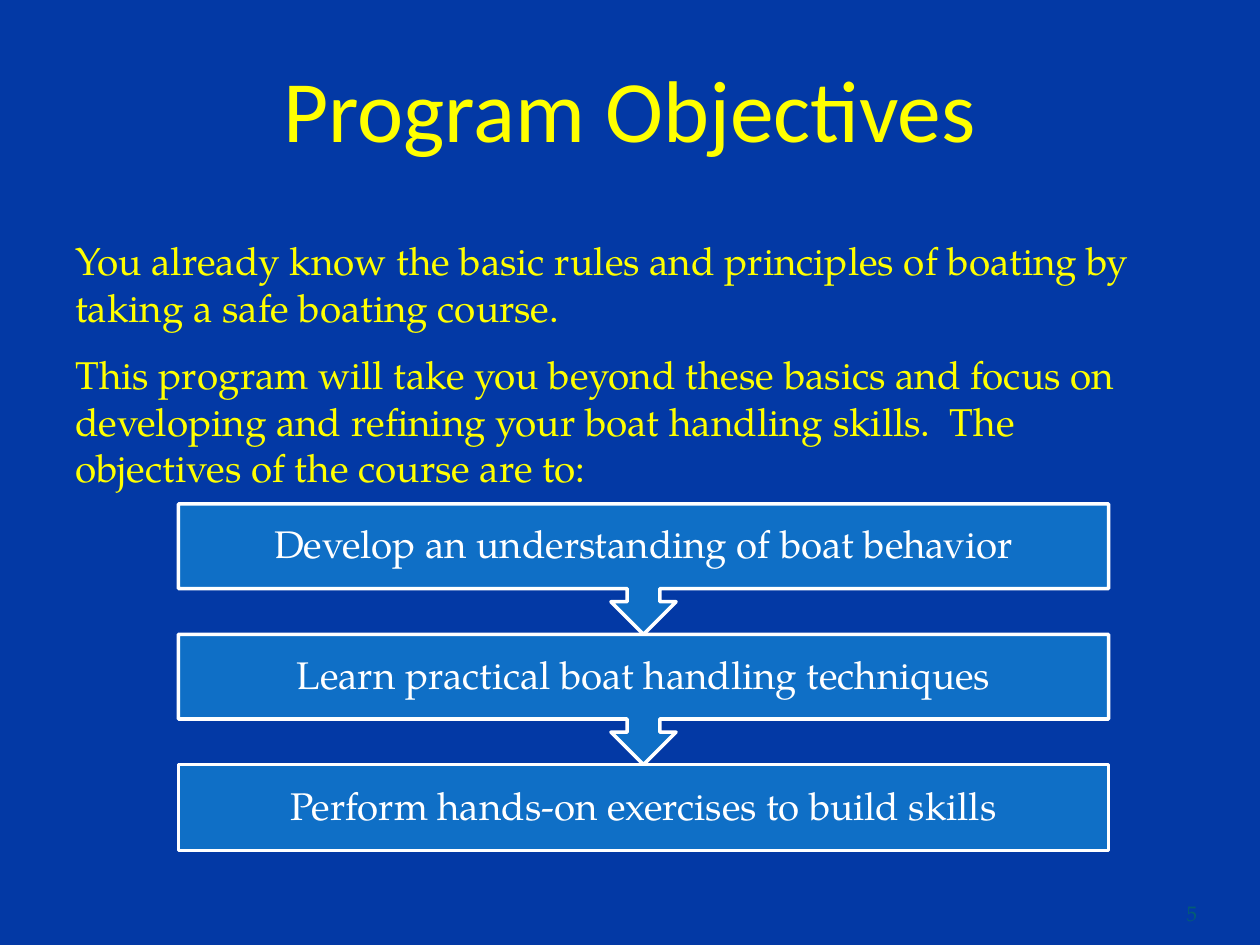
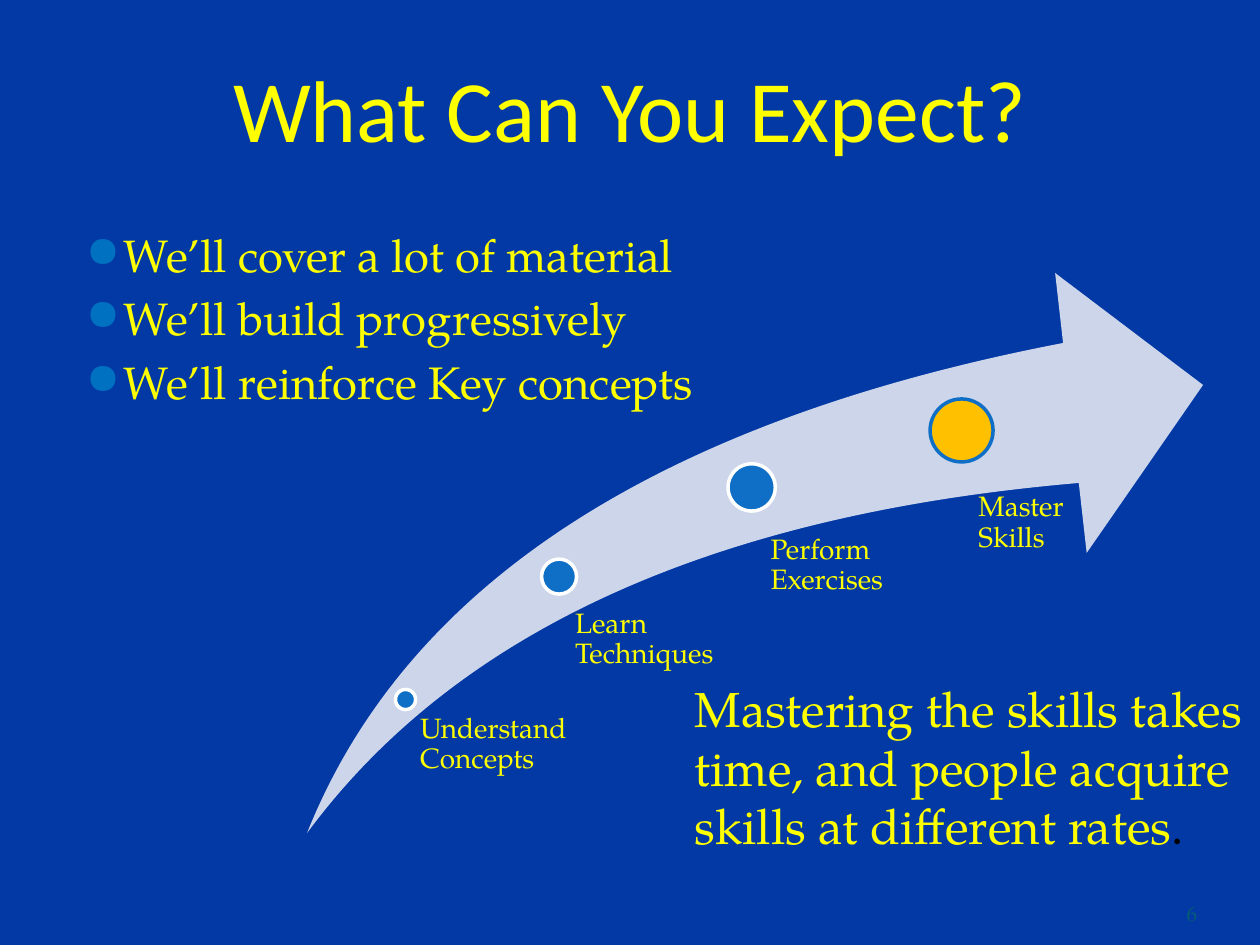
from pptx import Presentation
from pptx.dml.color import RGBColor
from pptx.enum.shapes import MSO_SHAPE
from pptx.enum.text import MSO_ANCHOR, PP_ALIGN
from pptx.oxml import parse_xml
from pptx.oxml.ns import nsdecls
from pptx.util import Pt

# Content
OBJECTIVES_TITLE = "Program Objectives"
OBJECTIVES_INTRO = [
    "You already know the basic rules and principles of boating by taking a safe boating course.",
    "This program will take you beyond these basics and focus on developing and refining "
    "your boat handling skills.  The objectives of the course are to:",
]
OBJECTIVES = [
    "Develop an understanding of boat behavior",
    "Learn practical boat handling techniques",
    "Perform hands-on exercises to build skills",
]
EXPECT_TITLE = "What Can You Expect?"
EXPECTATIONS = [
    "We’ll cover a lot of material",
    "We’ll build progressively",
    "We’ll reinforce Key concepts",
]
# Label paragraphs, dot (left, top, diameter), label box (left, top, width, height)
MILESTONES = [
    (["Understand Concepts"], (226, 394, 11.5), (234, 408, 120, 60)),
    (["Learn Techniques"], (309.5, 319.5, 20), (318, 348, 109, 91)),
    (["Perform Exercises"], (416, 265, 27), (426, 306, 107, 146)),
    (["Master", "Skills"], (531.5, 228, 36), (540, 281.5, 107, 162)),
]
CLOSING = ["Mastering the skills takes", "time, and people acquire", "skills at different rates"]

# Shared style
NAVY, YELLOW, WHITE, BLACK = "0339A5", "FFFF00", "FFFFFF", "000000"
BLUE, GOLD, PALE, BULLET, NUMBER = "0F6FC6", "FFC000", "CCD5EA", "0070C0", "045C75"
TITLE_FONT, BODY_FONT = "Calibri", "TeX Gyre Pagella"
INSETS = (7.2, 3.6, 7.2, 3.6)


def rgb(value):
    return RGBColor.from_string(value)


def style(r, size, color, font=BODY_FONT):
    r.font.size, r.font.name = Pt(size), font
    r.font.color.rgb = rgb(color)


def write(sp, lines, size, color=YELLOW, font=BODY_FONT, align=PP_ALIGN.LEFT,
          anchor=MSO_ANCHOR.TOP, insets=INSETS, gap=0, spacing=1.0):
    tf = sp.text_frame
    tf.word_wrap, tf.vertical_anchor = True, anchor
    tf.margin_left, tf.margin_top, tf.margin_right, tf.margin_bottom = map(Pt, insets)
    for i, line in enumerate(lines):
        p = tf.add_paragraph() if i else tf.paragraphs[0]
        p.text = line
        p.alignment, p.line_spacing = align, spacing
        p.space_before = Pt(gap if i else 0)
        style(p.runs[0], size, color, font)
    return tf


def add_text(s, box, lines, size, **options):
    return write(s.shapes.add_textbox(*map(Pt, box)), lines, size, **options)


def add_shape(s, kind, box, fill, line=None):
    sp = s.shapes.add_shape(kind, *map(Pt, box))
    sp.shadow.inherit = False
    sp.fill.solid()
    sp.fill.fore_color.rgb = rgb(fill)
    if line:
        sp.line.color.rgb, sp.line.width = rgb(line), Pt(2)
    else:
        sp.line.fill.background()
    return sp


def add_bullet(p):
    pPr = p._p.get_or_add_pPr()
    pPr.set("marL", str(Pt(21.6)))
    pPr.set("indent", str(-Pt(21.6)))
    for tag in (f'buClr {nsdecls("a")}><a:srgbClr val="{BULLET}"/></a:buClr',
                f'buSzPct {nsdecls("a")} val="95000"/',
                f'buChar {nsdecls("a")} char="●"/'):
        pPr.append(parse_xml(f"<a:{tag}>"))


def new_slide(prs, title, number):
    s = prs.slides.add_slide(prs.slide_layouts[6])
    s.background.fill.solid()
    s.background.fill.fore_color.rgb = rgb(NAVY)
    add_text(s, (36, 1.5, 648, 90), [title], 50, font=TITLE_FONT, align=PP_ALIGN.CENTER,
             anchor=MSO_ANCHOR.BOTTOM, insets=(0, 3.6, 0, 0))
    add_text(s, (624, 508, 60, 28), [str(number)], 12, color=NUMBER, align=PP_ALIGN.RIGHT,
             anchor=MSO_ANCHOR.MIDDLE, insets=(0, 0, 0, 0))
    return s


def objectives_slide(prs):
    s = new_slide(prs, OBJECTIVES_TITLE, 5)
    add_text(s, (36, 132, 648, 126), OBJECTIVES_INTRO, 22.1, gap=12)

    # Stacked steps, last one first so each arrow tip lies on the next step
    left, top, width, step, last_height = 102, 288, 531.5, 74.5, 49
    last = len(OBJECTIVES) - 1
    for i in range(last, -1, -1):
        kind = MSO_SHAPE.RECTANGLE if i == last else MSO_SHAPE.DOWN_ARROW_CALLOUT
        height = last_height if i == last else step
        sp = add_shape(s, kind, (left, top + i * step, width, height), BLUE, WHITE)
        write(sp, [OBJECTIVES[i]], 22, color=WHITE, align=PP_ALIGN.CENTER,
              anchor=MSO_ANCHOR.MIDDLE, insets=(12, 12, 12, 12), spacing=0.9)


def expectations_slide(prs):
    s = new_slide(prs, EXPECT_TITLE, 6)
    tf = add_text(s, (42, 126, 648, 345.5), EXPECTATIONS, 26, gap=5.2)
    for p in tf.paragraphs:
        add_bullet(p)

    # Rising arrow with growing dots
    arrow = add_shape(s, MSO_SHAPE.SWOOSH_ARROW, (175.5, 156, 512, 320), PALE)
    arrow.adjustments[0] = arrow.adjustments[1] = 0.25
    for i, (label, (x, y, size), box) in enumerate(MILESTONES):
        goal = i == len(MILESTONES) - 1
        add_shape(s, MSO_SHAPE.OVAL, (x, y, size, size),
                  GOLD if goal else BLUE, BLUE if goal else WHITE)
        add_text(s, box, label, 16, insets=(0.53 * size, 0, 0, 0), spacing=0.9)

    # Closing remark, ending in a black full stop
    tf = add_text(s, (390, 384, 330, 108.5), CLOSING, 28, insets=(7.2, 3.6, 0, 3.6))
    r = tf.paragraphs[-1].add_run()
    r.text = "."
    style(r, 28, BLACK)


def main():
    prs = Presentation()
    prs.slide_width, prs.slide_height = Pt(720), Pt(540)
    objectives_slide(prs)
    expectations_slide(prs)
    prs.save("out.pptx")


if __name__ == "__main__":
    main()
